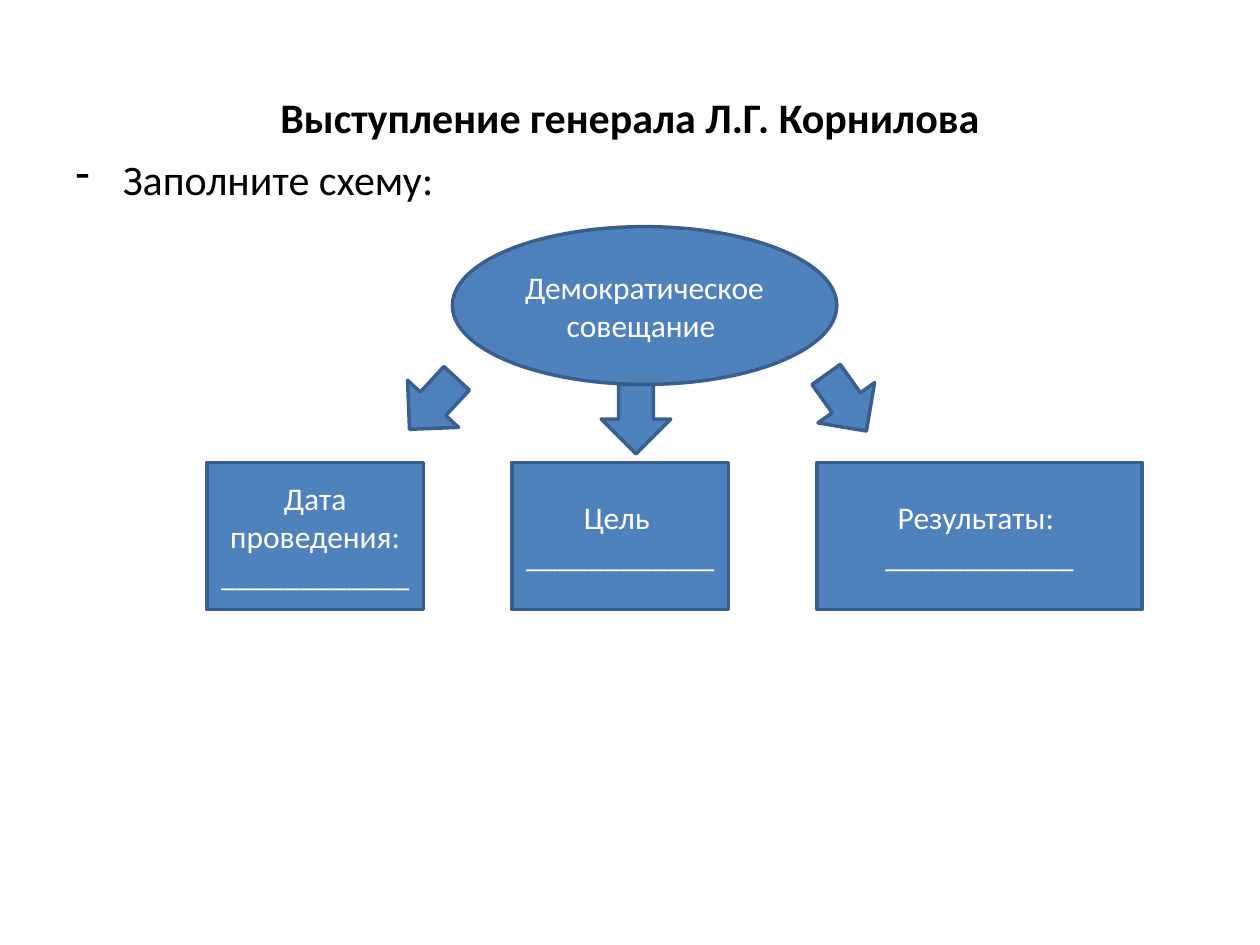
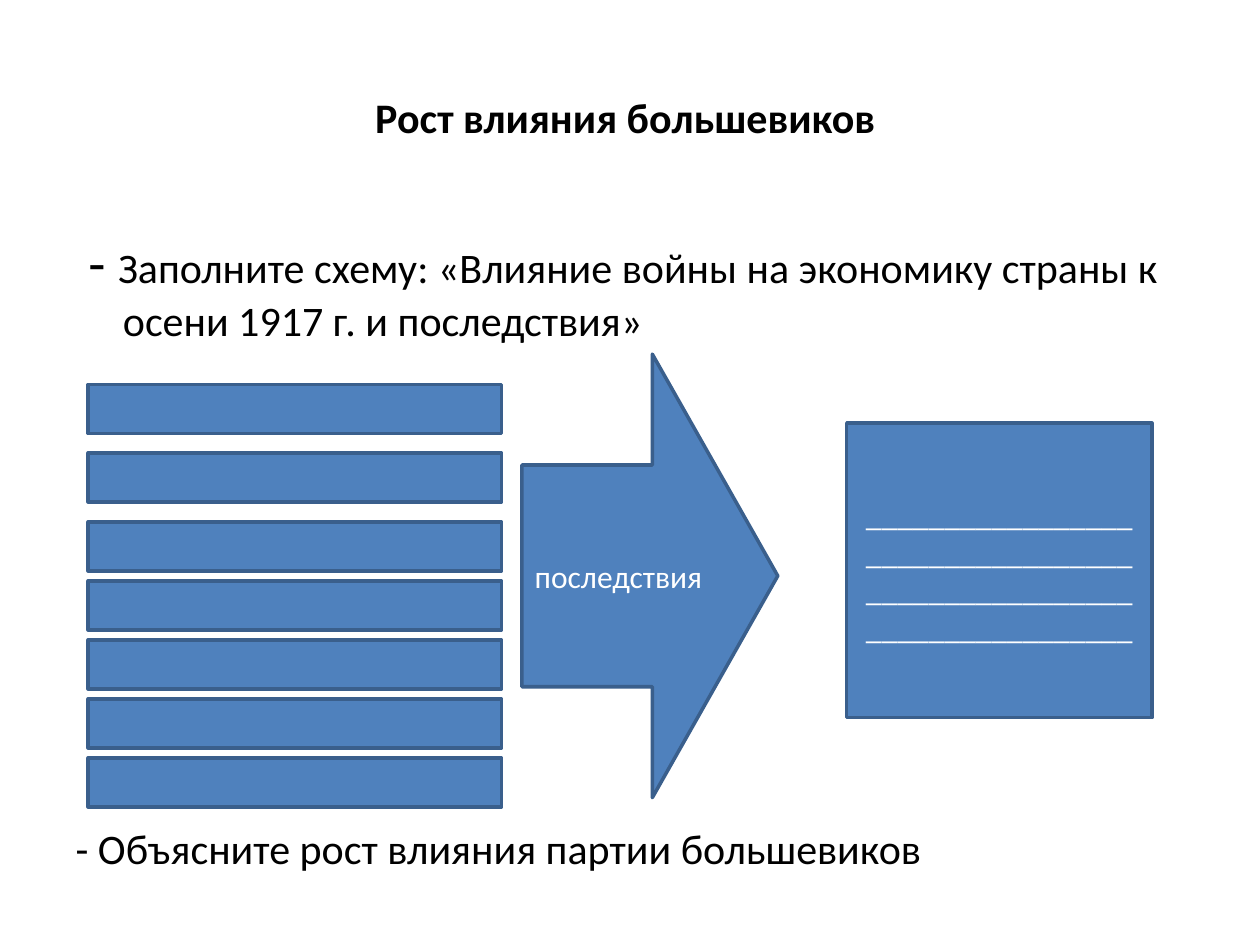
import lxml.etree
import pptx
import pptx.dml.color
import pptx.enum.shapes
import pptx.enum.text
import pptx.oxml.ns
import pptx.util

Cm = pptx.util.Cm
Pt = pptx.util.Pt
RGB = pptx.dml.color.RGBColor
MSO = pptx.enum.shapes.MSO_SHAPE
CENTER = pptx.enum.text.PP_ALIGN.CENTER
MIDDLE = pptx.enum.text.MSO_ANCHOR.MIDDLE

theme = {
    "fill": RGB(0x4F, 0x81, 0xBD),
    "line": RGB(0x3A, 0x5F, 0x8C),
    "line_width": Pt(2),
    "title": {"name": "Calibri", "size": Pt(24), "bold": True, "color": RGB(0, 0, 0)},
    "body": {"name": "Calibri", "size": Pt(24), "color": RGB(0, 0, 0)},
    "dash": {"name": "Calibri", "size": Pt(32), "color": RGB(0, 0, 0)},
    "label": {"name": "Calibri", "size": Pt(18), "color": RGB(255, 255, 255)},
}


def add_run(p, text, style):
    r = p.add_run()
    r.text = text
    for key, value in theme[style].items():
        if key == "color":
            r.font.color.rgb = value
        else:
            setattr(r.font, key, value)


def add_box(s, kind, box, lines=(), rotation=0):
    sp = s.shapes.add_shape(kind, *map(Cm, box))
    sp.shadow.inherit = False
    sp.rotation = rotation
    sp.fill.solid()
    sp.fill.fore_color.rgb = theme["fill"]
    sp.line.color.rgb = theme["line"]
    sp.line.width = theme["line_width"]
    tf = sp.text_frame
    tf.vertical_anchor = MIDDLE
    for i, text in enumerate(lines):
        p = tf.add_paragraph() if i else tf.paragraphs[0]
        p.alignment = CENTER
        add_run(p, text, "label")
    return sp


prs = pptx.Presentation()
prs.slide_width, prs.slide_height = Cm(25.4), Cm(19.05)

slides = []
for title, body_top, body_height in [
    ("Выступление генерала Л.Г. Корнилова", 2.97, 15.47),
    ("Рост влияния большевиков ", 4.45, 13.82),
]:
    s = prs.slides.add_slide(prs.slide_layouts[1])
    body = s.placeholders[1]
    for sp, top, height in [(s.shapes.title, 0.76, 3.18), (body, body_top, body_height)]:
        place = {"left": Cm(1.27), "top": Cm(top), "width": Cm(22.86), "height": Cm(height)}
        for key, value in place.items():
            setattr(sp, key, value)
        sp.text_frame.auto_size = pptx.enum.text.MSO_AUTO_SIZE.NONE
    p = s.shapes.title.text_frame.paragraphs[0]
    p.alignment = CENTER
    add_run(p, title, "title")
    slides.append((s, body.text_frame))

s, tf = slides[0]
p = tf.paragraphs[0]
add_run(p, "Заполните схему:", "body")
pPr = p._p.get_or_add_pPr()
lxml.etree.SubElement(pPr, pptx.oxml.ns.qn("a:buFontTx"))
lxml.etree.SubElement(pPr, pptx.oxml.ns.qn("a:buChar")).set("char", "-")

add_box(s, MSO.OVAL, (9.12, 4.57, 7.75, 3.18), ["Демократическое", "совещание "])
for left, top, rotation in [(8.03, 7.44, 222.7), (12.12, 7.75, 180), (16.36, 7.42, 144.5)]:
    add_box(s, MSO.UP_ARROW, (left, top, 1.4, 1.4), rotation=rotation)
for i, (label, width) in enumerate(
    [("Дата проведения:", 4.37), ("Цель ", 4.37), ("Результаты: ", 6.55)]
):
    add_box(s, MSO.RECTANGLE, (4.17 + 6.15 * i, 9.32, width, 2.97), [label, "_" * 12])

s, tf = slides[1]
p = tf.paragraphs[0]
add_run(p, " - ", "dash")
add_run(
    p,
    "Заполните схему: «Влияние войны на экономику страны к осени 1917 г. и последствия»",
    "body",
)
conclusion = tf.add_paragraph()
conclusion.space_before = Pt(273)
add_run(conclusion, "- Объясните рост влияния партии большевиков", "body")
for p in tf.paragraphs:
    lxml.etree.SubElement(p._p.get_or_add_pPr(), pptx.oxml.ns.qn("a:buNone"))

wide_tops = [7.75 + 1.38 * i for i in range(2)]
tight_tops = [10.52 + 1.19 * i for i in range(5)]
for top in wide_tops + tight_tops:
    add_box(s, MSO.RECTANGLE, (1.78, top, 8.33, 0.99))
arrow = add_box(s, MSO.RIGHT_ARROW, (10.52, 7.14, 5.16, 8.94), ["последствия "])
arrow.adjustments[1] = 0.49
add_box(s, MSO.RECTANGLE, (17.07, 8.53, 6.15, 5.94), ["_" * 68])

prs.save("out.pptx")
